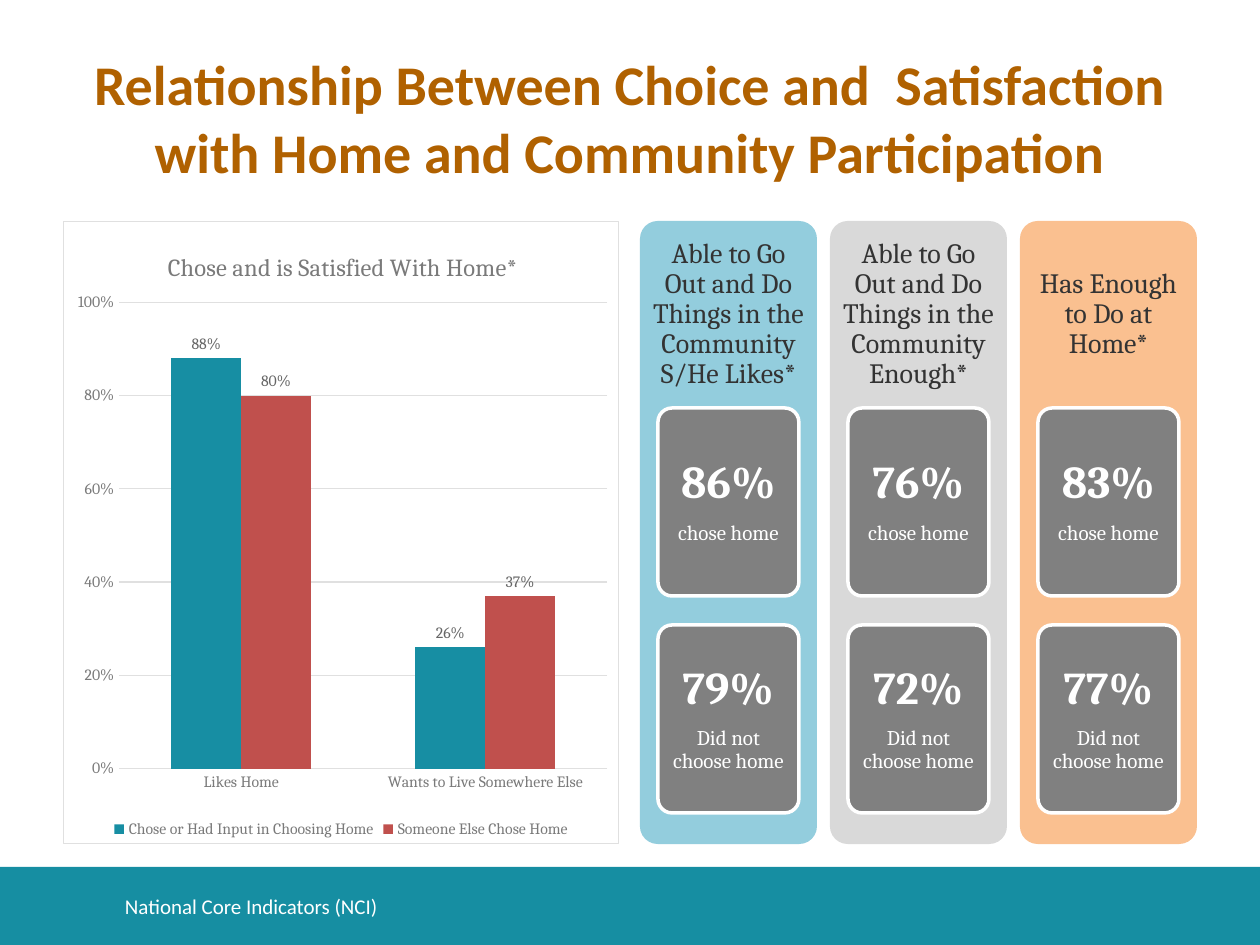
"""Build the slide on choice, home satisfaction and community participation."""
from pptx import Presentation
from pptx.chart.data import CategoryChartData
from pptx.dml.color import RGBColor
from pptx.enum.chart import XL_CHART_TYPE as ChartType, XL_LABEL_POSITION as LabelPosition
from pptx.enum.chart import XL_LEGEND_POSITION as LegendPosition, XL_TICK_MARK as TickMark
from pptx.enum.shapes import MSO_SHAPE as Shape
from pptx.enum.text import MSO_ANCHOR as Anchor, PP_ALIGN as Align
from pptx.oxml import parse_xml
from pptx.oxml.ns import nsdecls, qn
from pptx.util import Emu, Pt

PX = 914400 / 126
WHITE = RGBColor(0xFF, 0xFF, 0xFF)
TEAL = RGBColor(0x16, 0x8E, 0xA2)
BAR_TEAL = RGBColor(0x17, 0x8E, 0xA3)
BAR_RED = RGBColor(0xC0, 0x50, 0x4D)
BROWN = RGBColor(0xB0, 0x61, 0x00)
DARK = RGBColor(0x33, 0x33, 0x33)
LABEL_GRAY = RGBColor(0x66, 0x66, 0x66)
AXIS_GRAY = RGBColor(0x7A, 0x7A, 0x7A)
CARD_GRAY = RGBColor(0x80, 0x80, 0x80)
LINE_GRAY = RGBColor(0xE0, 0xE0, 0xE0)
BLUE = RGBColor(0x93, 0xCD, 0xDD)
SILVER = RGBColor(0xD9, 0xD9, 0xD9)
ORANGE = RGBColor(0xFA, 0xC0, 0x90)

presentation = Presentation()
presentation.slide_width, presentation.slide_height = Emu(round(1260 * PX)), Emu(round(945 * PX))
slide = presentation.slides.add_slide(presentation.slide_layouts[6])


def add_panel(kind, box, fill, line=None):
    shape = slide.shapes.add_shape(kind, *[Emu(round(value * PX)) for value in box])
    shape.shadow.inherit = False
    shape.fill.solid()
    shape.fill.fore_color.rgb = fill
    if kind == Shape.ROUNDED_RECTANGLE:
        shape.adjustments[0] = 0.1
    if line is None:
        shape.line.fill.background()
    else:
        shape.line.color.rgb = line
        shape.line.width = Pt(2)
    return shape


def write(shape, text, styles, font_name, color, align=Align.CENTER, margins=(13, 6), spacing=None):
    frame = shape.text_frame
    frame.word_wrap = True
    frame.vertical_anchor = Anchor.MIDDLE
    frame.margin_left = frame.margin_right = Emu(round(margins[0] * PX))
    frame.margin_top = frame.margin_bottom = Emu(round(margins[1] * PX))
    frame.text = text
    for paragraph, (size, bold) in zip(frame.paragraphs, styles):
        paragraph.alignment = align
        if spacing:
            paragraph.line_spacing = spacing
            paragraph.space_after = Pt(8)
        font = paragraph.runs[0].font
        font.name, font.size, font.bold = font_name, Pt(size), bold
        font.color.rgb = color


add_panel(Shape.RECTANGLE, (0, 867, 1260, 78), TEAL)
title = slide.shapes.add_textbox(*[Emu(round(value * PX)) for value in (63, 38, 1134, 158)])
write(title, "Relationship Between Choice and  Satisfaction with Home and Community Participation",
      [(32, True)], "Calibri", BROWN)

data = CategoryChartData(number_format="0%")
data.categories = ["Likes Home", "Wants to Live Somewhere Else"]
data.add_series("Chose or Had Input in Choosing Home", (0.88, 0.26))
data.add_series("Someone Else Chose Home", (0.8, 0.37))
chart_box = [Emu(round(value * PX)) for value in (63, 221, 556, 623)]
chart = slide.shapes.add_chart(ChartType.COLUMN_CLUSTERED, *chart_box, data).chart
chart.font.name, chart.font.size = "Cambria", Pt(10)
chart.font.color.rgb = DARK

chart.has_title = True
chart.chart_title.text_frame.text = "Chose and is Satisfied With Home*"
title_font = chart.chart_title.text_frame.paragraphs[0].runs[0].font
title_font.name, title_font.size, title_font.bold = "Cambria", Pt(14), False
title_font.color.rgb = AXIS_GRAY

chart.has_legend = True
chart.legend.position = LegendPosition.BOTTOM
chart.legend.include_in_layout = False
value_axis, category_axis = chart.value_axis, chart.category_axis
for font in (chart.legend.font, value_axis.tick_labels.font, category_axis.tick_labels.font):
    font.name, font.size = "Cambria", Pt(9)
    font.color.rgb = AXIS_GRAY

value_axis.minimum_scale, value_axis.maximum_scale, value_axis.major_unit = 0, 1, 0.2
value_axis.tick_labels.number_format = "0%"
value_axis.tick_labels.number_format_is_linked = False
value_axis.format.line.fill.background()
value_axis.major_tick_mark = category_axis.major_tick_mark = TickMark.NONE
for line in (value_axis.major_gridlines.format.line, category_axis.format.line):
    line.color.rgb = LINE_GRAY
    line.width = Pt(0.75)

plot = chart.plots[0]
plot.gap_width, plot.overlap, plot.vary_by_categories = 150, 0, False
for series, color in zip(plot.series, (BAR_TEAL, BAR_RED)):
    series.format.fill.solid()
    series.format.fill.fore_color.rgb = color
    labels = series.data_labels
    labels.show_value = True
    labels.position = LabelPosition.OUTSIDE_END
    labels.number_format, labels.number_format_is_linked = "0%", False
    labels.font.name, labels.font.size = "Cambria", Pt(9)
    labels.font.color.rgb = LABEL_GRAY

chart_node = chart.element.find(qn("c:chart"))
chart_node.addnext(parse_xml(
    f'<c:spPr {nsdecls("c", "a")}><a:solidFill><a:srgbClr val="{WHITE}"/></a:solidFill>'
    f'<a:ln w="9525"><a:solidFill><a:srgbClr val="{LINE_GRAY}"/></a:solidFill></a:ln></c:spPr>'))
layouts = [
    ("c:title", {"xMode": "edge", "yMode": "edge", "x": 0.18, "y": 0.04}),
    ("c:plotArea", {"layoutTarget": "inner", "xMode": "edge", "yMode": "edge",
                    "x": 0.1, "y": 0.13, "w": 0.88, "h": 0.75}),
]
for tag, values in layouts:
    node = chart_node.find(qn(tag))
    layout = node.find(qn("c:layout"))
    if layout is None:
        layout = parse_xml(f'<c:layout {nsdecls("c")}/>')
        node.insert(0, layout)
    items = "".join(f'<c:{name} val="{value}"/>' for name, value in values.items())
    layout.append(parse_xml(f'<c:manualLayout {nsdecls("c")}>{items}</c:manualLayout>'))

columns = [
    ("Able to Go Out and Do Things in the Community S/He Likes*", BLUE, "86%", "79%"),
    ("Able to Go Out and Do Things in the Community Enough*", SILVER, "76%", "72%"),
    ("Has Enough to Do at Home*", ORANGE, "83%", "77%"),
]
for index, (heading, fill, chose, did_not) in enumerate(columns):
    left = 640 + 190 * index
    add_panel(Shape.ROUNDED_RECTANGLE, (left, 221, 177, 623), fill)
    header = slide.shapes.add_textbox(*[Emu(round(value * PX)) for value in (left, 221, 177, 187)])
    write(header, heading, [(16, False)], "Cambria", DARK, margins=(9, 9), spacing=0.9)
    for top, share, caption in ((408, chose, "chose home"), (625, did_not, "Did not choose home")):
        card = add_panel(Shape.ROUNDED_RECTANGLE, (left + 18, top, 141, 188), CARD_GRAY, WHITE)
        write(card, f"{share}\n{caption}", [(26, True), (12, False)], "Cambria", WHITE,
              margins=(10, 10), spacing=0.9)

footer = slide.shapes.add_textbox(*[Emu(round(value * PX)) for value in (112, 881, 932, 50)])
write(footer, "National Core Indicators (NCI)", [(12, False)], "Calibri", WHITE, Align.LEFT)

presentation.save("out.pptx")
